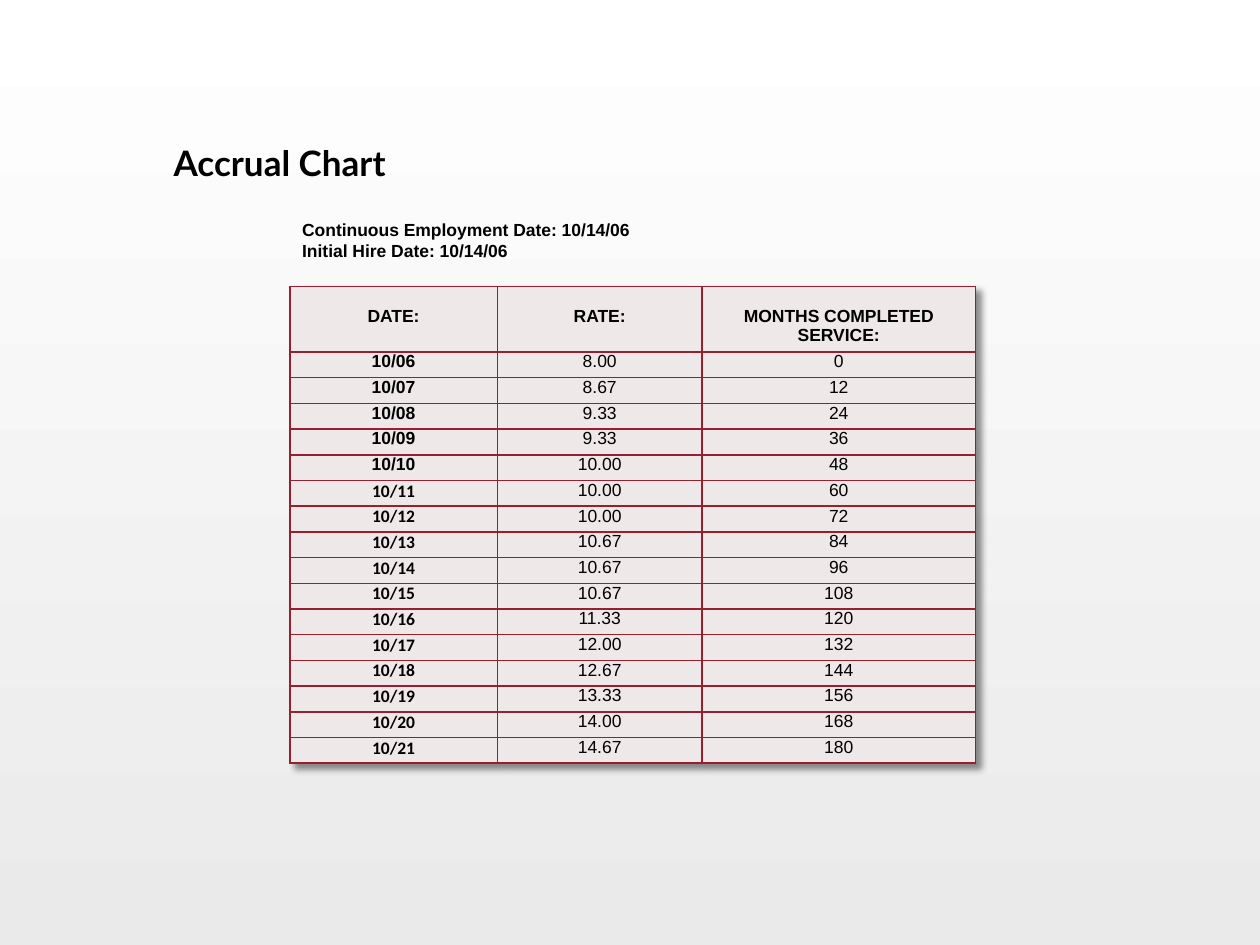
from dataclasses import dataclass

from lxml import etree
from pptx import Presentation
from pptx.dml.color import RGBColor as Rgb
from pptx.enum import text as t
from pptx.oxml import ns
from pptx.util import Pt


@dataclass(frozen=True)
class Theme:
    ink: str = "000000"
    rule: str = "981E32"
    cell: str = "EFE8E8"
    low: str = "EAEAEA"
    high: str = "FFFFFF"
    head: str = "Lato"
    body: str = "Arial"
    alt: str = "Calibri"
    big: int = 20
    small: int = 10


THEME = Theme()
HEADS = ["DATE:", "RATE:", "MONTHS COMPLETED SERVICE:"]
RATES = ["8.00", "8.67", "9.33", "9.33", "10.00", "10.00", "10.00", "10.67",
         "10.67", "10.67", "11.33", "12.00", "12.67", "13.33", "14.00", "14.67"]
START = 6
COLS = [118.6, 117, 156.2]
HEAD_H, ROW_H = 37.5, 14.71


def add_run(para, words, font, size, bold):
    run = para.add_run()
    run.text = words
    run.font.name = font
    run.font.size = Pt(size)
    run.font.bold = bold
    run.font.color.rgb = Rgb.from_string(THEME.ink)


def add_box(slide, box):
    frame = slide.shapes.add_textbox(*map(Pt, box)).text_frame
    return frame


def add_title(slide, box):
    frame = add_box(slide, box)
    frame.word_wrap = True
    frame.vertical_anchor = t.MSO_ANCHOR.BOTTOM
    frame.margin_left = frame.margin_right = Pt(36)
    para = frame.paragraphs[0]
    para.line_spacing = 0.9
    add_run(para, "Accrual Chart", THEME.head, THEME.big, True)


def add_dates(slide, box):
    frame = add_box(slide, box)
    frame.word_wrap = False
    first = frame.paragraphs[0]
    add_run(first, "Continuous Employment Date: 10/14/06", THEME.body, THEME.small, True)
    add_run(frame.add_paragraph(), "Initial Hire Date: 10/14/06", THEME.body, THEME.small, True)


def add_node(xml):
    return etree.fromstring(xml.replace(" ", f" {ns.nsdecls('a')} ", 1))


def add_rules(cell):
    props = cell._tc.get_or_add_tcPr()
    for i, side in enumerate("LRTB"):
        props.insert(i, add_node(
            f'<a:ln{side} w="{Pt(1)}"><a:solidFill><a:srgbClr val="{THEME.rule}"/>'
            f'</a:solidFill></a:ln{side}>'))


def add_shade(table):
    table._tbl.tblPr.insert(0, add_node(
        f'<a:effectLst ><a:outerShdw blurRad="{Pt(4)}" dist="{Pt(4)}" dir="2700000" '
        'algn="tl" rotWithShape="0"><a:srgbClr val="000000"><a:alpha val="43000"/>'
        '</a:srgbClr></a:outerShdw></a:effectLst>'))


def fill_cell(cell, words, font, bold, top):
    cell.margin_left = cell.margin_right = Pt(3)
    cell.margin_top, cell.margin_bottom = Pt(top), 0
    cell.fill.solid()
    cell.fill.fore_color.rgb = Rgb.from_string(THEME.cell)
    add_rules(cell)
    para = cell.text_frame.paragraphs[0]
    para.alignment = t.PP_ALIGN.CENTER
    add_run(para, words, font, THEME.small, bold)


def add_rates(slide, left, top):
    rows = len(RATES) + 1
    size = (sum(COLS), HEAD_H + ROW_H * len(RATES))
    table = slide.shapes.add_table(rows, len(COLS), *map(Pt, (left, top, *size))).table
    table.first_row = table.horz_banding = False
    add_shade(table)
    for col, width in zip(table.columns, COLS):
        col.width = Pt(width)
    for i, row in enumerate(table.rows):
        row.height = Pt(ROW_H if i else HEAD_H)
    for c, words in enumerate(HEADS):
        fill_cell(table.cell(0, c), words, THEME.body, True, 11.5)
    for i, rate in enumerate(RATES):
        year = START + i
        face = THEME.body if year <= 10 else THEME.alt
        fill_cell(table.cell(i + 1, 0), f"10/{year:02}", face, True, 0)
        fill_cell(table.cell(i + 1, 1), rate, THEME.body, False, 0)
        fill_cell(table.cell(i + 1, 2), str(12 * i), THEME.body, False, 0)


def add_ground(slide):
    fill = slide.background.fill
    fill.gradient()
    fill.gradient_angle = 90
    for stop, tint, place in zip(fill.gradient_stops, (THEME.low, THEME.high), (0, 1)):
        stop.color.rgb = Rgb.from_string(tint)
        stop.position = place


def main():
    deck = Presentation()
    deck.slide_width, deck.slide_height = Pt(720), Pt(540)
    slide = deck.slides.add_slide(deck.slide_layouts[6])
    add_ground(slide)
    add_title(slide, (63.2, 80, 612, 28.8))
    add_rates(slide, 165.6, 163.7)
    add_dates(slide, (165.6, 121.7, 203.8, 31.7))
    deck.save("out.pptx")


if __name__ == "__main__":
    main()
